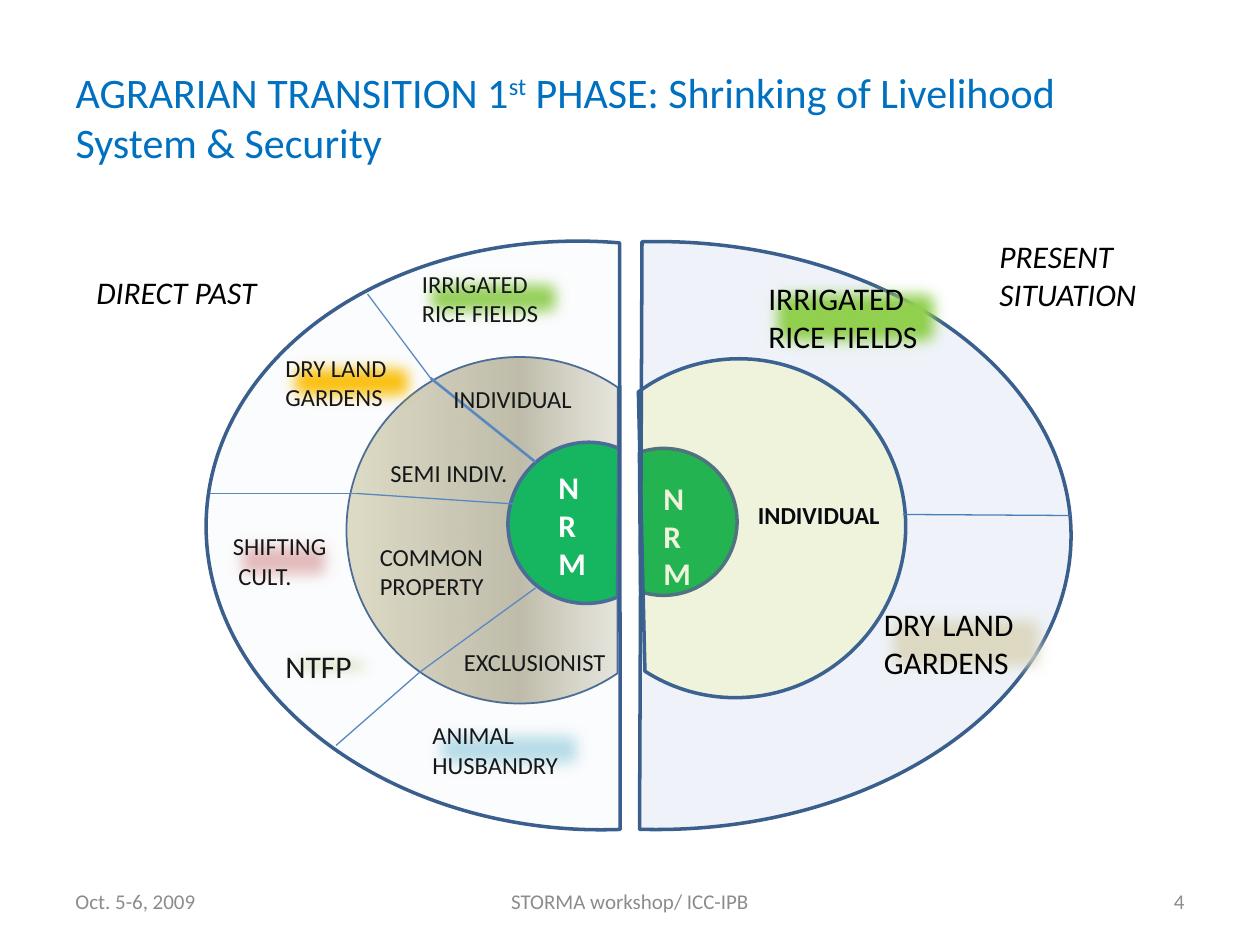
import pptx
import pptx.util
import pptx.dml.color
import pptx.enum.shapes
import pptx.enum.text
import pptx.oxml
import pptx.oxml.ns

SHAPE = pptx.enum.shapes.MSO_SHAPE
ALIGN = pptx.enum.text.PP_ALIGN
ANCHOR = pptx.enum.text.MSO_ANCHOR
FIT = pptx.enum.text.MSO_AUTO_SIZE
QN = pptx.oxml.ns.qn
NAMESPACE = pptx.oxml.ns.nsdecls("a")


def colour(value):
    return pptx.dml.color.RGBColor.from_string(value)


def xml(text):
    return pptx.oxml.parse_xml(text.replace(">", f" {NAMESPACE}>", 1))


class Diagram:
    columns, rows = 120, 90
    font = "Calibri"
    outline = "3A5F8C"
    divider = "4B7EBC"
    soft_edge = 127000

    def __init__(self, deck):
        self.deck = deck
        self.page = deck.slides.add_slide(deck.slide_layouts[5])

    def place(self, left, top, width, height):
        across = self.deck.slide_width / self.columns
        down = self.deck.slide_height / self.rows
        return [round(n * step) for n, step in
                zip((left, top, width, height), (across, down, across, down))]

    def style(self, span, size, ink, **values):
        values = {"name": self.font, "size": pptx.util.Pt(size), **values}
        for name, value in values.items():
            setattr(span.font, name, value)
        span.font.color.rgb = colour(ink)

    def set_text(self, box, text, size, ink="000000", align=ALIGN.LEFT,
                 anchor=ANCHOR.TOP, fit=FIT.SHAPE_TO_FIT_TEXT, **values):
        frame = box.text_frame
        settings = {"word_wrap": True, "auto_size": fit, "vertical_anchor": anchor}
        for name, value in settings.items():
            setattr(frame, name, value)
        for index, line in enumerate(text.split("\n")):
            para = frame.add_paragraph() if index else frame.paragraphs[0]
            para.alignment = align
            span = para.add_run()
            span.text = line
            self.style(span, size, ink, **values)

    def title(self, area, parts, size, ink):
        box = self.page.shapes.title
        box.left, box.top, box.width, box.height = self.place(*area)
        box.text_frame.vertical_anchor = ANCHOR.MIDDLE
        para = box.text_frame.paragraphs[0]
        para.alignment = ALIGN.LEFT
        for text, baseline in parts:
            span = para.add_run()
            span.text = text
            self.style(span, size, ink)
            if baseline:
                span.font._element.set("baseline", str(baseline * 1000))

    def text(self, area, text, size, **values):
        box = self.page.shapes.add_textbox(*self.place(*area))
        self.set_text(box, text, size, **values)

    def label(self, area, text, size, fill):
        box = self.page.shapes.add_shape(SHAPE.RECTANGLE, *self.place(*area))
        box.fill.solid()
        box.fill.fore_color.rgb = colour(fill)
        box.line.fill.background()
        box.shadow.inherit = False
        effects = box._element.spPr.find(QN("a:effectLst"))
        effects.append(xml(f'<a:softEdge rad="{self.soft_edge}"></a:softEdge>'))
        self.set_text(box, text, size)

    def chord(self, area, angles, turn=0, fill=None, opacity=100, stops=(), weight=2):
        shape = self.page.shapes.add_shape(SHAPE.CHORD, *self.place(*area))
        shape.adjustments[0], shape.adjustments[1] = angles
        shape.rotation = turn
        shape.shadow.inherit = False
        shape.line.color.rgb = colour(self.outline)
        shape.line.width = pptx.util.Pt(weight)
        if stops:
            self.gradient(shape, stops)
            return
        shape.fill.solid()
        shape.fill.fore_color.rgb = colour(fill)
        if opacity < 100:
            tint = shape._element.spPr.find(QN("a:solidFill"))[0]
            tint.append(xml(f'<a:alpha val="{opacity * 1000}"></a:alpha>'))

    def gradient(self, shape, stops):
        shape.fill.gradient()
        fill = shape._element.spPr.find(QN("a:gradFill"))
        for child in list(fill):
            fill.remove(child)
        marks = "".join(
            f'<a:gs pos="{place * 1000}"><a:srgbClr val="{tint}">'
            f'<a:alpha val="{opacity * 1000}"/></a:srgbClr></a:gs>'
            for place, tint, opacity in stops)
        fill.append(xml(f"<a:gsLst>{marks}</a:gsLst>"))
        fill.append(xml('<a:lin ang="10800000" scaled="0"></a:lin>'))

    def line(self, start, end, weight=0.75):
        ends = self.place(*start, *end)
        line = self.page.shapes.add_connector(
            pptx.enum.shapes.MSO_CONNECTOR.STRAIGHT, *ends)
        line.line.color.rgb = colour(self.divider)
        line.line.width = pptx.util.Pt(weight)
        line._element.spPr.append(xml("<a:effectLst></a:effectLst>"))


def main():
    deck = pptx.Presentation()
    deck.slide_width = pptx.util.Inches(10)
    deck.slide_height = pptx.util.Inches(7.5)
    diagram = Diagram(deck)

    diagram.title((6, 3.6, 108, 15), [
        ("AGRARIAN TRANSITION 1", 0), ("st", 30),
        (" PHASE: Shrinking of Livelihood System & Security", 0)], 24, "0070C0")

    diagram.chord((33, 34, 33, 33), (33.38, 182.66), weight=1, stops=[
        (0, "DDD9C3", 8), (50, "BCB8A3", 100), (100, "DFDBC2", 100)])
    diagram.chord((48.4, 42.1, 15.1, 15.4), (27, 162), 22.9, "00B050")
    diagram.text((8, 25.4, 30, 4.8), "DIRECT PAST", 18, italic=True)
    diagram.text((52, 44, 5, 12.1), "NRM", 18, ink="FFFFFF", bold=True)

    diagram.line((41, 36), (51, 44), 1.5)
    for start, end in [((34, 47), (49, 48)), ((40, 64), (51, 56)),
                       ((41, 36), (35, 28)), ((20, 47), (34, 47)),
                       ((40, 64), (32, 71))]:
        diagram.line(start, end)

    for area, text in [((42, 36, 15, 4), "INDIVIDUAL"),
                       ((36, 43, 16, 4), "SEMI INDIV."),
                       ((35, 51, 13, 6.8), "COMMON PROPERTY"),
                       ((43, 61, 17, 4), "EXCLUSIONIST")]:
        diagram.text(area, text, 14)

    for area, text, size, fill in [
            ((39, 25, 16, 6.8), "IRRIGATED RICE FIELDS", 14, "92D050"),
            ((26, 33, 15, 6.8), "DRY LAND GARDENS", 14, "FFC000"),
            ((21, 50, 12, 6.8), "SHIFTING\n CULT.", 14, "E6B9B8"),
            ((26, 61, 11, 4.8), "NTFP", 18, "C3D69B"),
            ((40, 68, 17, 6.8), "ANIMAL HUSBANDRY", 14, "B7DEE8")]:
        diagram.label(area, text, size, fill)

    diagram.chord((56.2, 42.7, 14, 14), (28.56, 159.02), 203.2, "00B050")
    diagram.text((62, 45, 3, 12.1), "NRM", 18, ink="FFFFFF", bold=True)
    diagram.chord((54.2, 34.1, 32, 32.4), (12.77, 162), 212.8, "FFFF00", 12)
    diagram.text((71, 47, 17, 4), "INDIVIDUAL", 14, bold=True)
    diagram.chord((23, 23, 79, 56), (52.33, 163.96), 180, "4F81BD", 9)
    diagram.line((86, 49), (102, 49.1))
    diagram.label((72, 26, 19, 8.5), "IRRIGATED RICE FIELDS", 18, "92D050")
    diagram.label((83, 57, 18, 8.5), "DRY LAND GARDENS", 18, "DDD9C3")
    diagram.text((94, 22, 17, 8.5), "PRESENT SITUATION", 18, italic=True)
    diagram.chord((19.6, 23, 73.1, 56), (48.45, 163.53), 3.3, "DCE6F2", 10)

    for left, width, text, align in [
            (6, 28, "Oct. 5-6, 2009", ALIGN.LEFT),
            (41, 38, "STORMA workshop/ ICC-IPB", ALIGN.CENTER),
            (86, 28, "4", ALIGN.RIGHT)]:
        diagram.text((left, 83.4, width, 4.8), text, 12, ink="8C8C8C",
                     align=align, anchor=ANCHOR.MIDDLE, fit=FIT.NONE)

    deck.save("out.pptx")


if __name__ == "__main__":
    main()
